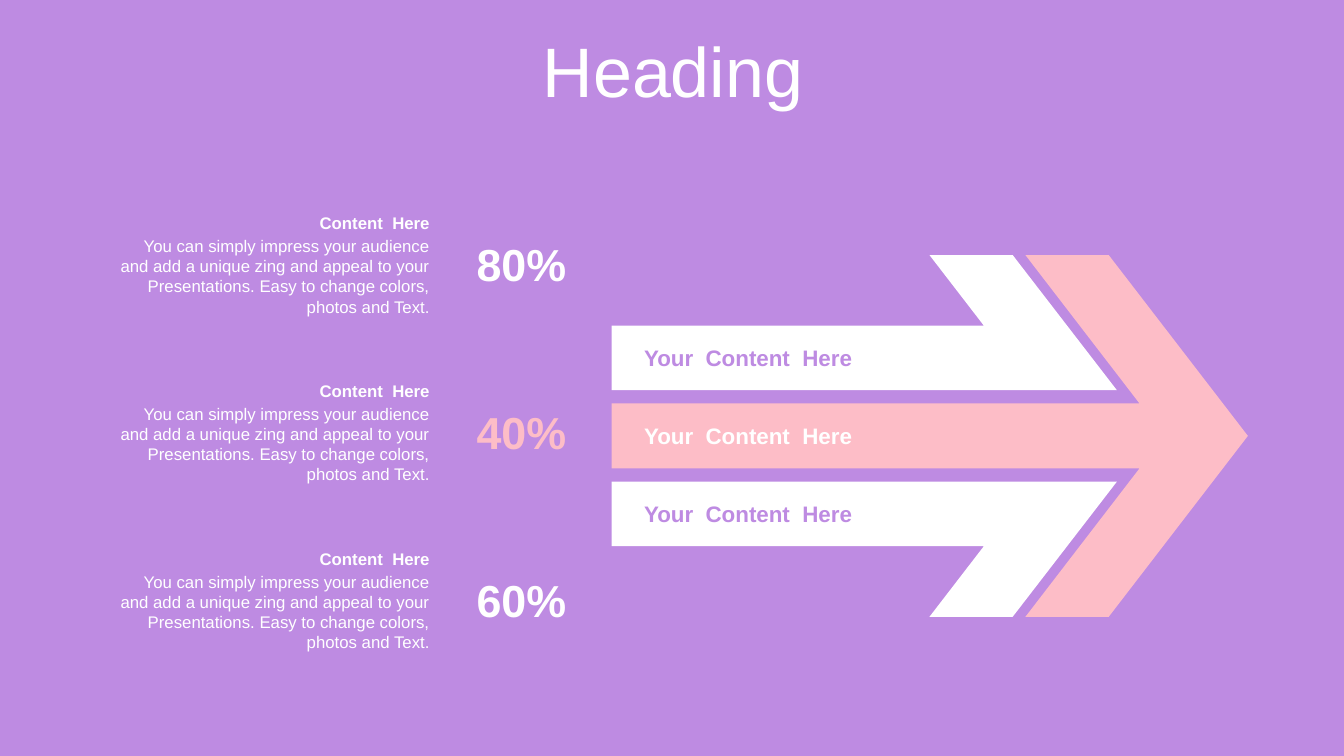
from dataclasses import dataclass

import pptx
import pptx.dml.color
import pptx.enum.text
import pptx.util

Pt = pptx.util.Pt
ALIGN = pptx.enum.text.PP_ALIGN
ANCHOR = pptx.enum.text.MSO_ANCHOR
FIT = pptx.enum.text.MSO_AUTO_SIZE


@dataclass(frozen=True)
class Theme:
    font: str = "Arial"
    back: str = "BE8BE2"
    light: str = "FFFFFF"
    pink: str = "FDBDC7"
    title: int = 50
    share: int = 32
    label: int = 16
    body: int = 12


class Deck:
    def __init__(self, theme):
        self.theme = theme
        self.prs = pptx.Presentation()
        self.prs.slide_width, self.prs.slide_height = Pt(960), Pt(540)
        self.slide = self.prs.slides.add_slide(self.prs.slide_layouts[5])
        self.paint(self.slide.background.fill, theme.back)

    def paint(self, fill, color):
        fill.solid()
        fill.fore_color.rgb = pptx.dml.color.RGBColor.from_string(color)

    def style(self, frame, text, size, color, bold=False, align=ALIGN.LEFT):
        """Set the text of a frame and format it."""
        frame.text = text
        frame.word_wrap = True
        para = frame.paragraphs[0]
        para.alignment = align
        font = para.runs[0].font
        font.name, font.size, font.bold = self.theme.font, Pt(size), bold
        font.color.rgb = pptx.dml.color.RGBColor.from_string(color)

    def title(self, text, box):
        shape = self.slide.shapes.title
        shape.left, shape.top, shape.width, shape.height = map(Pt, box)
        frame = shape.text_frame
        self.style(frame, text, self.theme.title, self.theme.light, align=ALIGN.CENTER)
        frame.auto_size = FIT.NONE
        frame.vertical_anchor = ANCHOR.MIDDLE
        frame.margin_top = Pt(12)
        frame.paragraphs[0].line_spacing = 0.8

    def text(self, text, box, size, color, bold=False, align=ALIGN.LEFT,
             anchor=ANCHOR.MIDDLE):
        frame = self.slide.shapes.add_textbox(*map(Pt, box)).text_frame
        self.style(frame, text, size, color, bold, align)
        frame.auto_size = FIT.SHAPE_TO_FIT_TEXT
        frame.vertical_anchor = anchor

    def shape(self, points, color):
        """Draw a closed, filled outline through the points."""
        first, *rest = [(Pt(x), Pt(y)) for x, y in points]
        build = self.slide.shapes.build_freeform(*first)
        build.add_line_segments(rest, close=True)
        shape = build.convert_to_shape()
        shape.shadow.inherit = False
        self.paint(shape.fill, color)
        shape.line.fill.background()


def flip(points, axis):
    """Mirror points across a level axis."""
    return [(x, 2 * axis - y) for x, y in points]


def main():
    theme = Theme()
    deck = Deck(theme)
    deck.title("Heading", (25, 22.3, 911.5, 57))

    # Each outline is drawn above the axis and mirrored below it.
    axis, top, left = 311.4, 182.2, 437
    head = [(732.5, top), (792, top)]
    shaft = [(814, 288.2), (left, 288.2)]
    deck.shape(head + [(891.4, axis)] + flip(head, axis)[::-1]
               + flip(shaft, axis) + shaft[::-1], theme.pink)
    wing = [(664, top), (723.4, top), (797.8, 278.7), (left, 278.7),
            (left, 232.6), (702.8, 232.6)]
    for points in (wing, flip(wing, axis)):
        deck.shape(points, theme.light)

    for row, color in enumerate((theme.back, theme.light, theme.back)):
        deck.text("Your  Content  Here", (453, 242 + 55.8 * row, 230, 26.7),
                  theme.label, color, bold=True)

    note = ("You can simply impress your audience and add a unique zing and appeal "
            "to your Presentations. Easy to change colors, photos and Text.")
    shares = (("80%", theme.light), ("40%", theme.pink), ("60%", theme.light))
    for row, (share, color) in enumerate(shares):
        y = 148.4 + 119.8 * row
        deck.text(share, (321, y + 17.2, 103, 46), theme.share, color,
                  bold=True, align=ALIGN.CENTER)
        deck.text("Content  Here", (74, y, 240, 21.8), theme.body, theme.light,
                  bold=True, align=ALIGN.RIGHT)
        deck.text(note, (75, y + 16.5, 239, 65.5), theme.body, theme.light,
                  align=ALIGN.RIGHT, anchor=ANCHOR.TOP)

    deck.prs.save("out.pptx")


if __name__ == "__main__":
    main()
